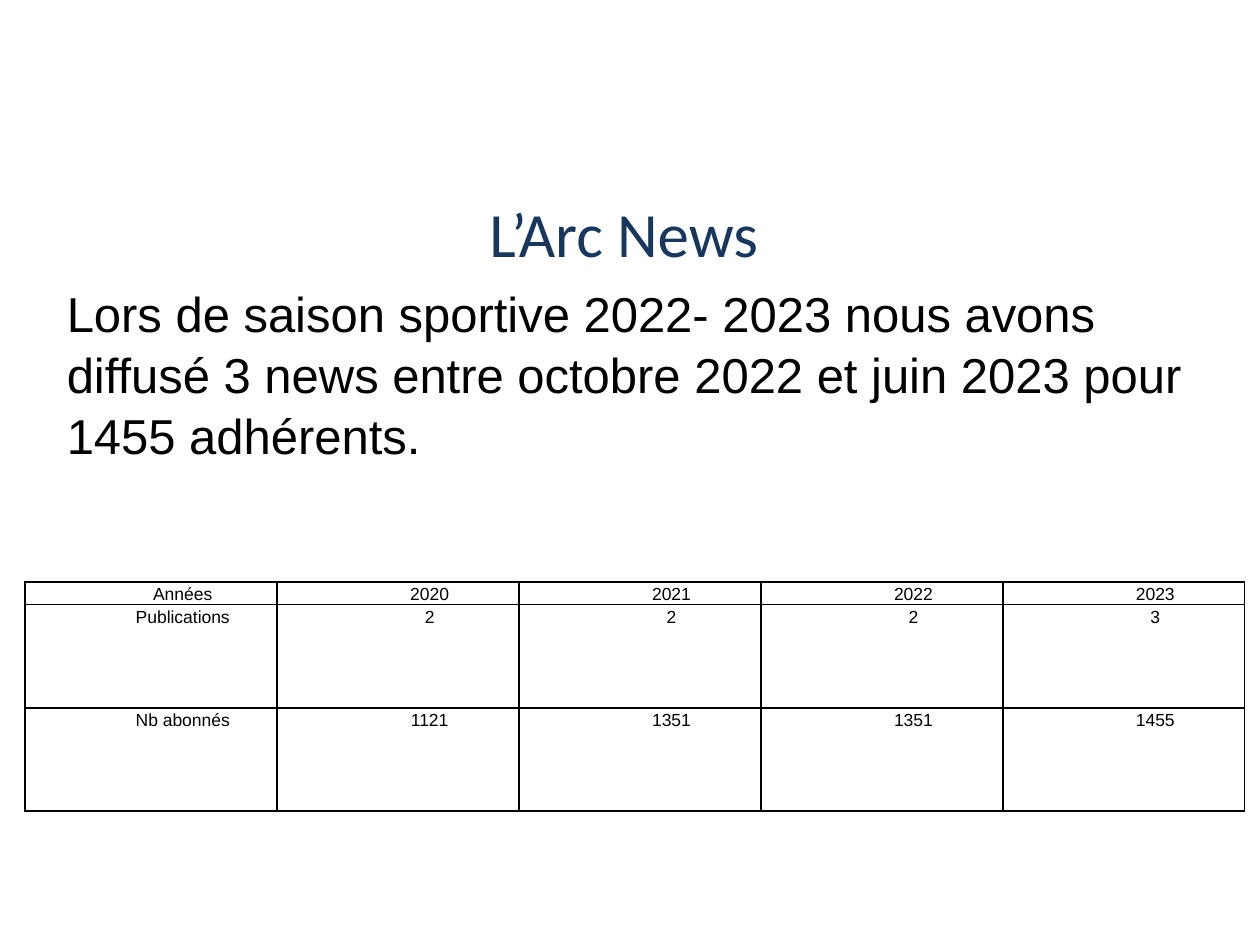
from dataclasses import dataclass

import pptx
import pptx.dml.color
import pptx.enum.text
import pptx.oxml.ns
import pptx.util
from lxml import etree

COLORS = {"title": "17375E", "text": "000000", "border": "000000", "background": "FFFFFF"}
SLIDE_WIDTH, SLIDE_HEIGHT = pptx.util.Inches(10), pptx.util.Inches(7.5)
GRID_COLUMNS, GRID_ROWS = 100, 75
ALIGN = pptx.enum.text.PP_ALIGN
ANCHOR = pptx.enum.text.MSO_ANCHOR


@dataclass
class Area:
    """A rectangle in columns and rows of the slide grid."""
    column: float
    row: float
    columns: float
    rows: float

    def box(self) -> tuple:
        return (across(self.column), down(self.row), across(self.columns), down(self.rows))


@dataclass
class TextStyle:
    font: str
    size: float
    color: str
    alignment: ALIGN
    line_spacing: float = 1.0
    left_indent: float = 0  # grid columns


TITLE_STYLE = TextStyle("Calibri", 36, "title", ALIGN.CENTER)
BODY_STYLE = TextStyle("Arial", 28, "text", ALIGN.LEFT, 1.04)
CELL_STYLE = TextStyle("Arial", 10, "text", ALIGN.CENTER, 1.15, 5)

TITLE_AREA = Area(-2, 10.7, 102, 9.5)
BODY_AREA = Area(4.3, 21.8, 91.3, 18.2)
TABLE_AREA = Area(2, 46.2, 96.8, 18)
COLUMN_WIDTHS = [20] + [19.2] * 4
ROW_HEIGHTS = [1.6, 8.2, 8.2]

TITLE = "L’Arc News"
BODY = ("Lors de saison sportive 2022- 2023 nous avons diffusé 3 news "
        "entre octobre 2022 et juin 2023 pour 1455 adhérents.")
TABLE = [
    ["Années", "2020", "2021", "2022", "2023"],
    ["Publications", "2", "2", "2", "3"],
    ["Nb abonnés", "1121", "1351", "1351", "1455"],
]


def across(columns: float) -> int:
    return round(SLIDE_WIDTH * columns / GRID_COLUMNS)


def down(rows: float) -> int:
    return round(SLIDE_HEIGHT * rows / GRID_ROWS)


def rgb(name: str) -> pptx.dml.color.RGBColor:
    return pptx.dml.color.RGBColor.from_string(COLORS[name])


def apply(target, values: dict) -> None:
    for name, value in values.items():
        setattr(target, name, value)


def write(text_frame, text: str, style: TextStyle) -> None:
    text_frame.text = text
    paragraph = text_frame.paragraphs[0]
    properties = paragraph._p.get_or_add_pPr()
    properties.set("marL", str(across(style.left_indent)))
    properties.set("indent", "0")
    etree.SubElement(properties, pptx.oxml.ns.qn("a:buNone"))
    apply(paragraph, {"alignment": style.alignment, "line_spacing": style.line_spacing,
                      "space_before": pptx.util.Pt(0)})
    font = paragraph.runs[0].font
    apply(font, {"name": style.font, "size": pptx.util.Pt(style.size)})
    font.color.rgb = rgb(style.color)


def fill_placeholder(shape, area: Area, text: str, style: TextStyle, frame: dict) -> None:
    apply(shape, dict(zip(("left", "top", "width", "height"), area.box())))
    apply(shape.text_frame, {"word_wrap": True, "vertical_anchor": ANCHOR.TOP,
                             "auto_size": pptx.enum.text.MSO_AUTO_SIZE.NONE, **frame})
    write(shape.text_frame, text, style)


def add_borders(cell) -> None:
    properties = cell._tc.get_or_add_tcPr()
    for position, side in enumerate(("lnL", "lnR", "lnT", "lnB")):
        line = etree.Element(pptx.oxml.ns.qn(f"a:{side}"), w=str(pptx.util.Pt(1)))
        fill = etree.SubElement(line, pptx.oxml.ns.qn("a:solidFill"))
        etree.SubElement(fill, pptx.oxml.ns.qn("a:srgbClr"), val=COLORS["border"])
        properties.insert(position, line)


def add_table(slide, area: Area, rows: list[list[str]]) -> None:
    table = slide.shapes.add_table(len(rows), len(rows[0]), *area.box()).table
    apply(table, {"first_row": False, "horz_banding": False})
    for column, width in zip(table.columns, COLUMN_WIDTHS):
        column.width = across(width)
    for row, height, texts in zip(table.rows, ROW_HEIGHTS, rows):
        row.height = down(height)
        for cell, text in zip(row.cells, texts):
            apply(cell, {"margin_left": across(0.7), "margin_right": across(0.7),
                         "margin_top": 0, "margin_bottom": 0,
                         "vertical_anchor": ANCHOR.TOP})
            cell.fill.background()
            add_borders(cell)
            write(cell.text_frame, text, CELL_STYLE)


def main() -> None:
    presentation = pptx.Presentation()
    apply(presentation, {"slide_width": SLIDE_WIDTH, "slide_height": SLIDE_HEIGHT})
    slide = presentation.slides.add_slide(presentation.slide_layouts[1])
    slide.background.fill.solid()
    slide.background.fill.fore_color.rgb = rgb("background")

    # Title, low in its box
    fill_placeholder(slide.shapes.title, TITLE_AREA, TITLE, TITLE_STYLE,
                     {"margin_left": across(2), "margin_right": across(1),
                      "margin_top": down(4.7), "margin_bottom": 0})
    # Summary sentence
    fill_placeholder(slide.placeholders[1], BODY_AREA, BODY, BODY_STYLE, {})
    # Publications and subscribers by year
    add_table(slide, TABLE_AREA, TABLE)

    presentation.save("out.pptx")


if __name__ == "__main__":
    main()
